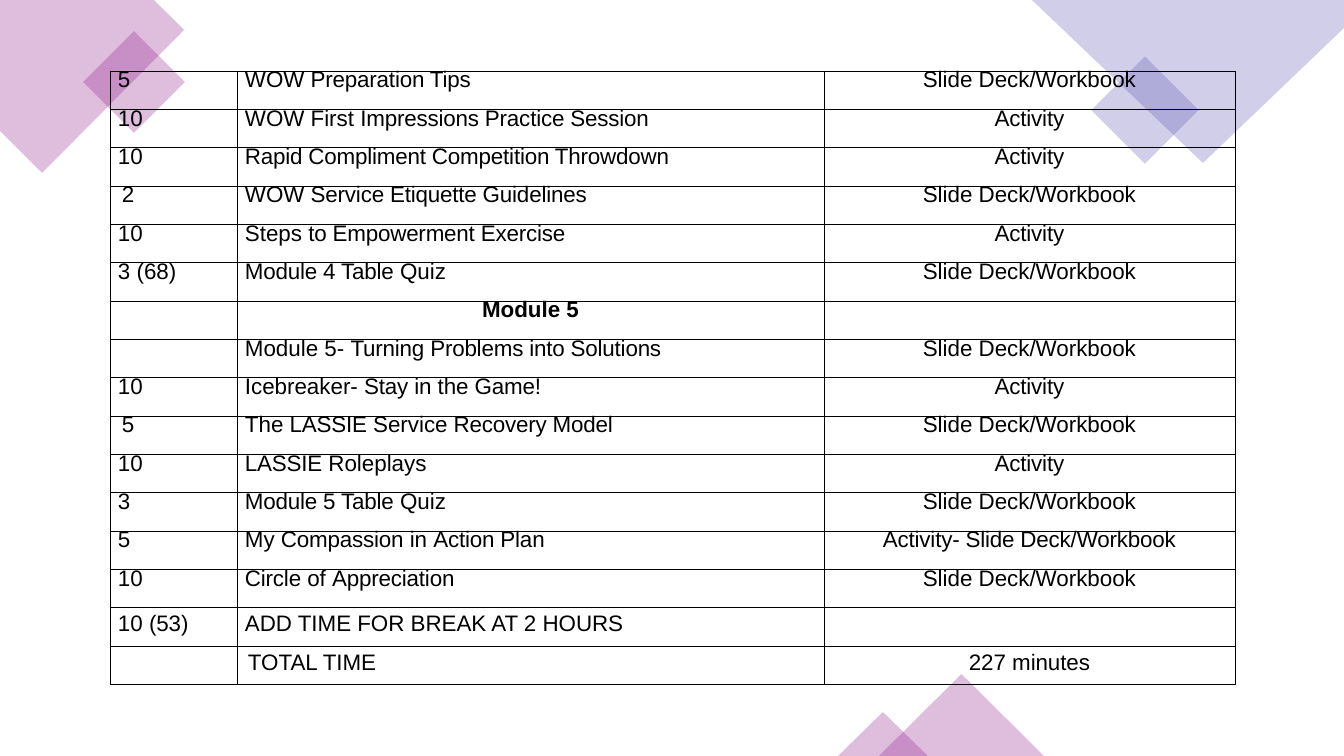
from lxml.etree import SubElement
from pptx import Presentation
from pptx.dml.color import RGBColor
from pptx.enum.shapes import MSO_SHAPE as Shape
from pptx.enum.text import MSO_ANCHOR as Anchor, PP_ALIGN as Align
from pptx.oxml import parse_xml
from pptx.oxml.ns import nsdecls, qn
from pptx.util import Pt

PX = 914400 / 100.8
COLORS = {"purple": "92278F", "violet": "665EB8", "ink": "000000"}
SLIDES, ACTIVITY = "Slide Deck/Workbook", "|Activity"
COLUMNS = [127, 587, 411]
TABLE_TOP, TABLE_HEIGHT = 71, 614
INDENT = 8
WIDE_INDENTS = {(3, 0): 12, (9, 0): 12, (15, 1): 11}
MODULE_ROW = 6
SUMMARY_START = 14

# Each "|" switches between normal and slightly tightened letter spacing.
AGENDA = [
    ("5", "WOW |Preparation Tips", SLIDES),
    ("10", "WOW First |Impressions Practice Session", ACTIVITY),
    ("10", "|Rapid Compliment Competition Throwdown", ACTIVITY),
    ("2", "WOW |Service Etiquette Guidelines", SLIDES),
    ("10", "Steps |to Empowerment Exercise", ACTIVITY),
    ("3 (68)", "|Module 4 Table |Quiz", SLIDES),
    ("", "Module |5", ""),
    ("", "Module 5- |Turning Problems into Solutions", SLIDES),
    ("10", "Icebreaker- |Stay in |the| Game!", ACTIVITY),
    ("5", "The |LASSIE |Service| Recovery Model", SLIDES),
    ("10", "|LASSIE |Roleplays", ACTIVITY),
    ("3", "|Module 5 Table |Quiz", SLIDES),
    ("5", "My |Compassion |in |Action Plan", "|Activity- " + SLIDES),
    ("10", "|Circle |of |Appreciation", SLIDES),
    ("10 |(53|)", "ADD TIME FOR BREAK AT 2 HOURS", ""),
    ("", "TOTAL TIME", "|22|7 m|inu|tes"),
]


def px(length):
    return round(length * PX)


def paint(shape, color):
    """Give the shape a 30 % opaque fill, without line or shadow."""
    shape.shadow.inherit = False
    shape.line.fill.background()
    shape.fill.solid()
    shape.fill.fore_color.rgb = RGBColor.from_string(COLORS[color])
    tint = shape.fill._xPr.find(qn("a:solidFill"))[0]
    SubElement(tint, qn("a:alpha"), val="30000")


def add_polygon(page, points, color):
    corners = [(px(x), px(y)) for x, y in points]
    builder = page.shapes.build_freeform(*corners[0], scale=1.0)
    builder.add_line_segments(corners[1:], close=True)
    paint(builder.convert_to_shape(), color)


def add_preset(page, kind, left, top, width, height, color, rotation=0):
    shape = page.shapes.add_shape(kind, px(left), px(top), px(width), px(height))
    shape.rotation = rotation
    paint(shape, color)


def add_borders(cell):
    properties = cell._tc.get_or_add_tcPr()
    for position, side in enumerate("LRTB"):
        properties.insert(position, parse_xml(
            f'<a:ln{side} {nsdecls("a")} w="{Pt(0.5)}"><a:solidFill>'
            f'<a:srgbClr val="{COLORS["ink"]}"/></a:solidFill></a:ln{side}>'))


def add_runs(para, text, bold):
    for position, part in enumerate(text.split("|")):
        if not part:
            continue
        span = para.add_run()
        span.text = part
        span.font.name, span.font.size, span.font.bold = "Arial", Pt(16), bold
        span.font.color.rgb = RGBColor.from_string(COLORS["ink"])
        if position % 2:
            span._r.get_or_add_rPr().set("spc", "-10")


def fill_cell(cell, row, column, text):
    heading = row == MODULE_ROW
    centered = column == 2 or heading
    cell.fill.background()
    add_borders(cell)
    cell.vertical_anchor = Anchor.TOP
    cell.margin_left = 0 if centered else px(WIDE_INDENTS.get((row, column), INDENT))
    cell.margin_right = cell.margin_bottom = 0
    cell.margin_top = px(4)
    para = cell.text_frame.paragraphs[0]
    para.alignment = Align.CENTER if centered else Align.LEFT
    if text and row < SUMMARY_START:
        para.line_spacing = Pt(12.5)
    add_runs(para, text, heading)


def add_agenda(page):
    table = page.shapes.add_table(
        len(AGENDA), len(COLUMNS), px(110), px(TABLE_TOP),
        px(sum(COLUMNS)), px(TABLE_HEIGHT)).table
    table.first_row = table.horz_banding = False
    for column, width in zip(table.columns, COLUMNS):
        column.width = px(width)
    for row, texts in enumerate(AGENDA):
        table.rows[row].height = px(TABLE_HEIGHT / len(AGENDA))
        for column, text in enumerate(texts):
            fill_cell(table.cell(row, column), row, column, text)


def main():
    deck = Presentation()
    deck.slide_width, deck.slide_height = px(1344), px(756)
    page = deck.slides.add_slide(deck.slide_layouts[6])
    add_polygon(page, [(0, 0), (154, 0), (184, 30), (42, 173), (0, 131)], "purple")
    add_preset(page, Shape.RECTANGLE, 98, 46, 72, 72, "purple", 315)
    add_preset(page, Shape.RECTANGLE, 1107, 72, 76, 76, "violet", 315)
    add_polygon(page, [(1032, 0), (1344, 0), (1344, 28), (1203, 163)], "violet")
    add_preset(page, Shape.ISOSCELES_TRIANGLE, 879, 674, 165, 82, "purple")
    add_preset(page, Shape.ISOSCELES_TRIANGLE, 838, 712, 90, 44, "purple")
    add_agenda(page)
    deck.save("out.pptx")


if __name__ == "__main__":
    main()
